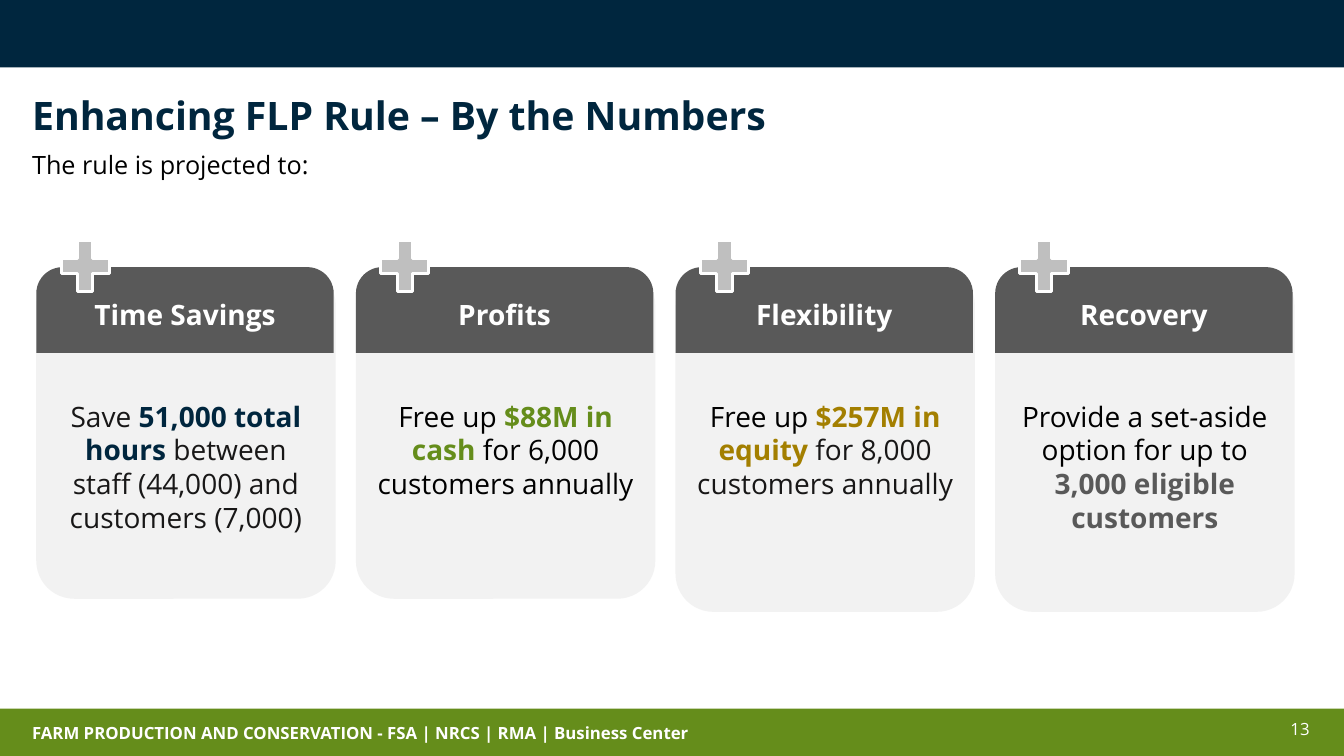
import pptx
from pptx.dml.color import RGBColor
from pptx.enum.shapes import MSO_SHAPE
from pptx.enum.text import MSO_ANCHOR, PP_ALIGN
from pptx.util import Inches, Pt

COLORS = {
    "navy": "00263E", "green": "658D1B", "gold": "A37F00", "gray": "595959",
    "panel": "F2F2F2", "plus": "BFBFBF", "white": "FFFFFF",
    "black": "000000", "ink": "181717",
}
FONT = "Open Sans"

# heading, panel height, runs of (text, color, bold)
CARDS = [
    ("Time Savings", 3.29, [
        ("Save ", "ink", False), ("51,000 total hours ", "navy", True),
        ("between staff (44,000) and customers (7,000)", "ink", False)]),
    ("Profits", 3.29, [
        ("Free up ", "black", False), ("$88M in cash ", "green", True),
        ("for 6,000 customers annually", "black", False)]),
    ("Flexibility", 3.42, [
        ("Free up ", "black", False), ("$257M in equity ", "gold", True),
        ("for 8,000 customers annually", "ink", False)]),
    ("Recovery", 3.42, [
        ("Provide a set-aside option for up to ", "black", False),
        ("3,000 eligible customers", "gray", True)]),
]
CARD_LEFT, CARD_TOP, CARD_PITCH = 0.36, 2.65, 3.17

presentation = pptx.Presentation()
presentation.slide_width = Inches(13.33)
presentation.slide_height = Inches(7.5)
slide = presentation.slides.add_slide(presentation.slide_layouts[6])


def add_filled_shape(kind, left, top, width, height, color, adjustments=()):
    shape = slide.shapes.add_shape(
        kind, Inches(left), Inches(top), Inches(width), Inches(height))
    shape.shadow.inherit = False
    shape.fill.solid()
    shape.fill.fore_color.rgb = RGBColor.from_string(COLORS[color])
    shape.line.fill.background()
    for index, value in enumerate(adjustments):
        shape.adjustments[index] = value
    return shape


def add_text(left, top, width, height, text, size, color, bold=False):
    box = slide.shapes.add_textbox(
        Inches(left), Inches(top), Inches(width), Inches(height))
    box.text_frame.word_wrap = True
    paragraph = box.text_frame.paragraphs[0]
    paragraph.text = text
    paragraph.font.name = FONT
    paragraph.font.size = Pt(size)
    paragraph.font.bold = bold
    paragraph.font.color.rgb = RGBColor.from_string(COLORS[color])
    return paragraph


# Bands and footer
add_filled_shape(MSO_SHAPE.RECTANGLE, 0, 0, 13.33, 0.67, "navy")
add_filled_shape(MSO_SHAPE.RECTANGLE, 0, 7.03, 13.33, 0.47, "green")
add_text(0.22, 7.12, 7.84, 0.5,
         "FARM PRODUCTION AND CONSERVATION - FSA | NRCS | RMA | Business Center",
         12, "white", bold=True)
add_text(12.7, 7.08, 0.45, 0.4, "13", 12, "white")

# Title and lead-in
title = add_text(0.22, 0.91, 12.78, 0.52, "Enhancing FLP Rule – By the Numbers",
                 28, "navy", bold=True)
title.line_spacing = 0.9
add_text(0.22, 1.43, 12.77, 0.69, "The rule is projected to:", 18, "black")

# Cards
for column, (heading, height, runs) in enumerate(CARDS):
    left = CARD_LEFT + column * CARD_PITCH

    panel = add_filled_shape(MSO_SHAPE.ROUNDED_RECTANGLE, left, CARD_TOP,
                             2.97, height, "panel", [0.127])
    frame = panel.text_frame
    frame.word_wrap = True
    frame.vertical_anchor = MSO_ANCHOR.TOP
    frame.margin_top = Inches(1.2)
    paragraph = frame.paragraphs[0]
    paragraph.alignment = PP_ALIGN.CENTER
    paragraph.font.name = FONT
    paragraph.font.size = Pt(20)
    for text, color, bold in runs:
        run = paragraph.add_run()
        run.text = text
        run.font.bold = bold
        run.font.color.rgb = RGBColor.from_string(COLORS[color])

    header = add_filled_shape(MSO_SHAPE.ROUND_2_SAME_RECTANGLE, left, CARD_TOP,
                              2.95, 0.85, "gray", [0.308, 0])
    header.text_frame.vertical_anchor = MSO_ANCHOR.MIDDLE
    paragraph = header.text_frame.paragraphs[0]
    paragraph.text = heading
    paragraph.alignment = PP_ALIGN.CENTER
    paragraph.font.name = FONT
    paragraph.font.size = Pt(20)
    paragraph.font.bold = True
    paragraph.font.color.rgb = RGBColor.from_string(COLORS["white"])

    plus = add_filled_shape(MSO_SHAPE.MATH_PLUS, left + 0.16, 2.3,
                            0.65, 0.68, "plus")
    plus.line.color.rgb = RGBColor.from_string(COLORS["white"])
    plus.line.width = Pt(2.25)

presentation.save("out.pptx")
